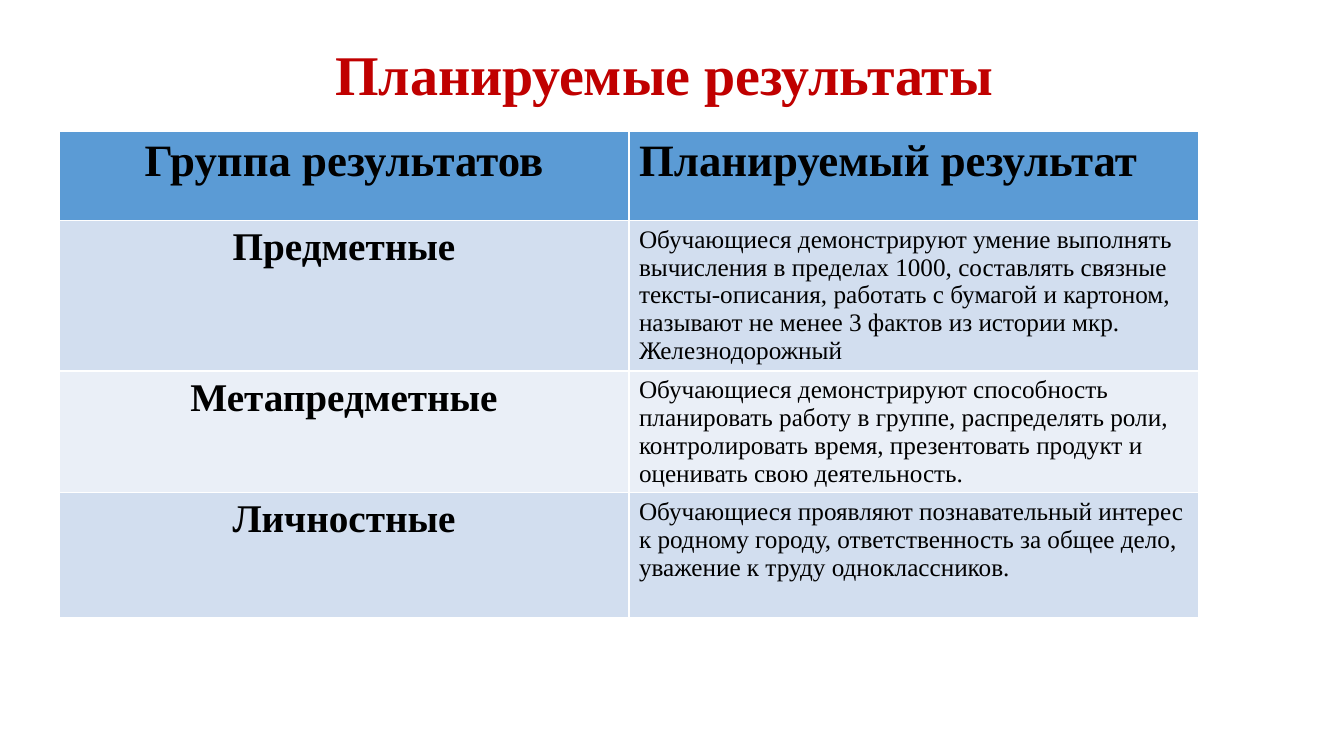
from dataclasses import dataclass
from typing import Any

from pptx import Presentation
from pptx.dml.color import RGBColor
from pptx.enum.text import MSO_ANCHOR, MSO_AUTO_SIZE, PP_ALIGN as Align
from pptx.util import Cm, Pt

BLACK = RGBColor(0x00, 0x00, 0x00)
RED = RGBColor(0xC0, 0x00, 0x00)
HEADER_BLUE = RGBColor(0x5B, 0x9B, 0xD5)
BAND_DARK = RGBColor(0xD2, 0xDE, 0xEF)
BAND_LIGHT = RGBColor(0xEA, 0xEF, 0xF7)

FONT = "Times New Roman"
TABLE_LEFT, TABLE_TOP = 1.49, 3.31
COLUMN_WIDTH = 14.36

TITLE_FORMAT = {"name": FONT, "size": Pt(40), "bold": True}
HEADER_FORMAT = {"name": FONT, "size": Pt(32), "bold": True}
GROUP_FORMAT = {"name": FONT, "size": Pt(28), "bold": True}
RESULT_FORMAT = {"name": FONT, "size": Pt(18), "bold": False}


@dataclass(frozen=True)
class ResultRow:
    group: str
    result: str
    height: float
    fill: RGBColor
    group_format: dict[str, Any]
    result_format: dict[str, Any]


ROWS = [
    ResultRow("Группа результатов", "Планируемый результат",
              2.25, HEADER_BLUE, HEADER_FORMAT, HEADER_FORMAT),
    ResultRow("Предметные",
              "Обучающиеся демонстрируют умение выполнять вычисления в пределах 1000, "
              "составлять связные тексты-описания, работать с бумагой и картоном, "
              "называют не менее 3 фактов из истории мкр. Железнодорожный",
              3.79, BAND_DARK, GROUP_FORMAT, RESULT_FORMAT),
    ResultRow("Метапредметные",
              "Обучающиеся демонстрируют способность планировать работу в группе, "
              "распределять роли, контролировать время, презентовать продукт и "
              "оценивать свою деятельность.",
              3.07, BAND_LIGHT, GROUP_FORMAT, RESULT_FORMAT),
    ResultRow("Личностные",
              "Обучающиеся проявляют познавательный интерес к родному городу, "
              "ответственность за общее дело, уважение к труду одноклассников.",
              3.13, BAND_DARK, GROUP_FORMAT, RESULT_FORMAT),
]


def write_text(frame: Any, text: str, font_format: dict[str, Any],
               color: RGBColor, alignment: Align) -> None:
    para = frame.paragraphs[0]
    para.alignment = alignment
    span = para.add_run()
    span.text = text
    for name, value in font_format.items():
        setattr(span.font, name, value)
    span.font.color.rgb = color


def add_title(page: Any) -> None:
    box = page.shapes.add_textbox(Cm(8.2), Cm(0.86), Cm(17.48), Cm(1.96))
    box.text_frame.word_wrap = False
    box.text_frame.auto_size = MSO_AUTO_SIZE.SHAPE_TO_FIT_TEXT
    write_text(box.text_frame, "Планируемые результаты", TITLE_FORMAT, RED, Align.LEFT)


def add_results_table(page: Any) -> None:
    """Add the table; its default style supplies the white cell borders."""
    total_height = sum(row.height for row in ROWS)
    table = page.shapes.add_table(
        len(ROWS), 2, Cm(TABLE_LEFT), Cm(TABLE_TOP),
        Cm(2 * COLUMN_WIDTH), Cm(total_height)).table
    for column in table.columns:
        column.width = Cm(COLUMN_WIDTH)
    for table_row, row in zip(table.rows, ROWS):
        table_row.height = Cm(row.height)
        contents = [(row.group, row.group_format, Align.CENTER),
                    (row.result, row.result_format, Align.LEFT)]
        for cell, (text, font_format, alignment) in zip(table_row.cells, contents):
            cell.fill.solid()
            cell.fill.fore_color.rgb = row.fill
            cell.vertical_anchor = MSO_ANCHOR.TOP
            write_text(cell.text_frame, text, font_format, BLACK, alignment)


def main() -> None:
    deck = Presentation()
    deck.slide_width, deck.slide_height = Cm(33.87), Cm(19.05)
    page = deck.slides.add_slide(deck.slide_layouts[6])
    add_results_table(page)
    add_title(page)
    deck.save("out.pptx")


if __name__ == "__main__":
    main()
